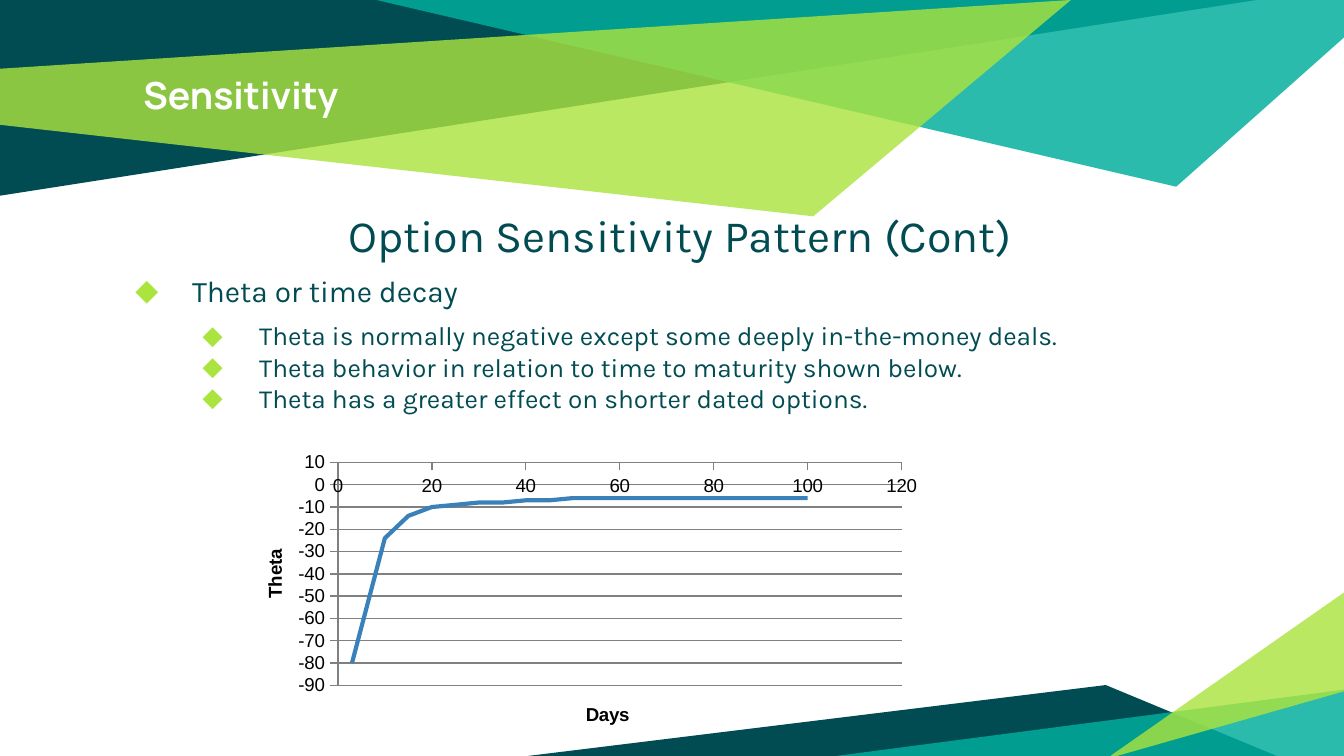
from lxml import etree
from pptx import Presentation
from pptx.chart.data import XyChartData
from pptx.dml.color import RGBColor
from pptx.enum import chart as charts, text as texts
from pptx.oxml import ns
from pptx.util import Cm, Pt

DARK, TEAL, LIME, WHITE = "004C52", "00AE9D", "ABE33F", "FFFFFF"
BLACK, GRID, CURVE = "000000", "808080", "3A81BA"

FACETS = [
    (DARK, 100, [(0, 0), (0, 3.7), (23.75, 0)]),
    (TEAL, 83, [(7.11, 0), (22.23, 3.53), (25.4, 0.71), (25.4, 0)]),
    (LIME, 81, [(0, 1.3), (0, 2.36), (15.37, 4.09), (20.24, 0)]),
    (DARK, 100, [(9.98, 14.29), (24.13, 14.29), (20.9, 12.95)]),
    (TEAL, 83, [(25.45, 13.03), (25.45, 14.35), (15.34, 14.35)]),
    (LIME, 81, [(25.43, 13.06), (25.43, 11.18), (20.9, 14.35)]),
]
TITLE = "Sensitivity"
HEADING = "Option Sensitivity Pattern (Cont)"
POINTS = [
    ("Theta or time decay", 0, 16, 6),
    ("Theta is normally negative except some deeply in-the-money deals.", 1, 14, 6),
    ("Theta behavior in relation to time to maturity shown below.", 1, 14, 0),
    ("Theta has a greater effect on shorter dated options.", 1, 14, 0),
]
THETA_BY_DAY = [(3, -80), (10, -24), (15, -14), (20, -10), (25, -9), (30, -8),
                (35, -8), (40, -7), (45, -7), (50, -6), (100, -6)]
PLOT = {"x": 0.117, "y": 0.075, "w": 0.839, "h": 0.768}


def color(value):
    return RGBColor.from_string(value)


def add_xml(parent, tag, **attributes):
    node = etree.SubElement(parent, ns.qn(tag))
    for key, value in attributes.items():
        node.set(key, str(value))
    return node


def add_facet(slide, fill, opacity, corners):
    points = [(Cm(x), Cm(y)) for x, y in corners]
    builder = slide.shapes.build_freeform(*points[0])
    builder.add_line_segments(points[1:])
    facet = builder.convert_to_shape()
    facet.shadow.inherit = False
    facet.line.fill.background()
    facet.fill.solid()
    facet.fill.fore_color.rgb = color(fill)
    if opacity < 100:
        tint = facet.fill._xPr.find(ns.qn("a:solidFill"))[0]
        add_xml(tint, "a:alpha", val=opacity * 1000)


def add_frame(slide, left, top, width, height):
    frame = slide.shapes.add_textbox(Cm(left), Cm(top), Cm(width), Cm(height)).text_frame
    frame.word_wrap = True
    frame.margin_left = frame.margin_right = Cm(0.25)
    frame.margin_top = frame.margin_bottom = Cm(0.25)
    return frame


def write(paragraph, content, font="Karla", size=14, fill=DARK, bold=False,
          align=texts.PP_ALIGN.LEFT, before=0, margin=0, indent=0, bullet=None):
    run = paragraph.add_run()
    run.text = content
    run.font.name, run.font.size, run.font.bold = font, Pt(size), bold
    run.font.color.rgb = color(fill)
    paragraph.alignment = align
    paragraph.space_before = Pt(before)
    properties = paragraph._p.get_or_add_pPr()
    properties.set("marL", str(Cm(margin)))
    properties.set("indent", str(Cm(indent)))
    if bullet:
        add_xml(add_xml(properties, "a:buClr"), "a:srgbClr", val=LIME)
        add_xml(properties, "a:buFont", typeface=font)
        add_xml(properties, "a:buChar", char=bullet)


def style_axis(axis, label, low, high, step):
    axis.minimum_scale, axis.maximum_scale, axis.major_unit = low, high, step
    axis.major_tick_mark = charts.XL_TICK_MARK.OUTSIDE
    axis.minor_tick_mark = charts.XL_TICK_MARK.NONE
    axis.tick_label_position = charts.XL_TICK_LABEL_POSITION.NEXT_TO_AXIS
    axis.tick_labels.number_format = "General"
    axis.tick_labels.number_format_is_linked = False
    axis.format.line.color.rgb = color(GRID)
    axis.format.line.width = Pt(0.75)
    write(axis.axis_title.text_frame.paragraphs[0], label, font="Arial", size=10,
          fill=BLACK, bold=True, align=texts.PP_ALIGN.CENTER)


def add_decay_chart(slide):
    data = XyChartData()
    decay = data.add_series("Series 1")
    for day, theta in THETA_BY_DAY:
        decay.add_data_point(day, theta)
    chart = slide.shapes.add_chart(
        charts.XL_CHART_TYPE.XY_SCATTER_SMOOTH_NO_MARKERS,
        Cm(4.9), Cm(8.33), Cm(12.7), Cm(5.49), data).chart
    chart.has_legend = chart.has_title = False
    chart.font.name, chart.font.size = "Arial", Pt(10)
    chart.font.color.rgb = color(BLACK)
    chart.plots[0].vary_by_categories = False

    curve = chart.plots[0].series[0]
    curve.smooth = True
    curve.marker.style = charts.XL_MARKER_STYLE.NONE
    curve.format.line.color.rgb = color(CURVE)
    curve.format.line.width = Pt(2.25)

    days, thetas = chart.category_axis, chart.value_axis
    style_axis(days, "Days", 0, 120, 20)
    style_axis(thetas, "Theta", -90, 10, 10)
    days.has_major_gridlines = False
    thetas.has_major_gridlines = True
    thetas.major_gridlines.format.line.color.rgb = color(GRID)
    thetas.major_gridlines.format.line.width = Pt(0.75)
    thetas.crosses_at = 10

    area = chart._chartSpace.chart.plotArea
    for old in area.findall(ns.qn("c:layout")):
        area.remove(old)
    layout = add_xml(area, "c:layout")
    area.insert(0, layout)
    manual = add_xml(layout, "c:manualLayout")
    add_xml(manual, "c:layoutTarget", val="inner")
    for side in "xy":
        add_xml(manual, f"c:{side}Mode", val="edge")
    for side, share in PLOT.items():
        add_xml(manual, f"c:{side}", val=share)


def main():
    deck = Presentation()
    deck.slide_width, deck.slide_height = Cm(25.4), Cm(14.29)
    slide = deck.slides.add_slide(deck.slide_layouts[6])
    slide.background.fill.solid()
    slide.background.fill.fore_color.rgb = color(WHITE)
    for facet in FACETS:
        add_facet(slide, *facet)

    title = add_frame(slide, 2.46, 1.12, 20.47, 1.63)
    write(title.paragraphs[0], TITLE, font="Manrope", size=20, fill=WHITE, bold=True)

    body = add_frame(slide, 2.11, 3.68, 21.29, 10.06)
    write(body.paragraphs[0], HEADING, size=24, align=texts.PP_ALIGN.CENTER,
          before=6, margin=0.2)
    for content, level, size, before in POINTS:
        paragraph = body.add_paragraph()
        paragraph.level = level
        write(paragraph, content, size=size, before=before,
              margin=1.27 * (level + 1), indent=-1.07, bullet="◆")

    add_decay_chart(slide)
    deck.save("out.pptx")


if __name__ == "__main__":
    main()
